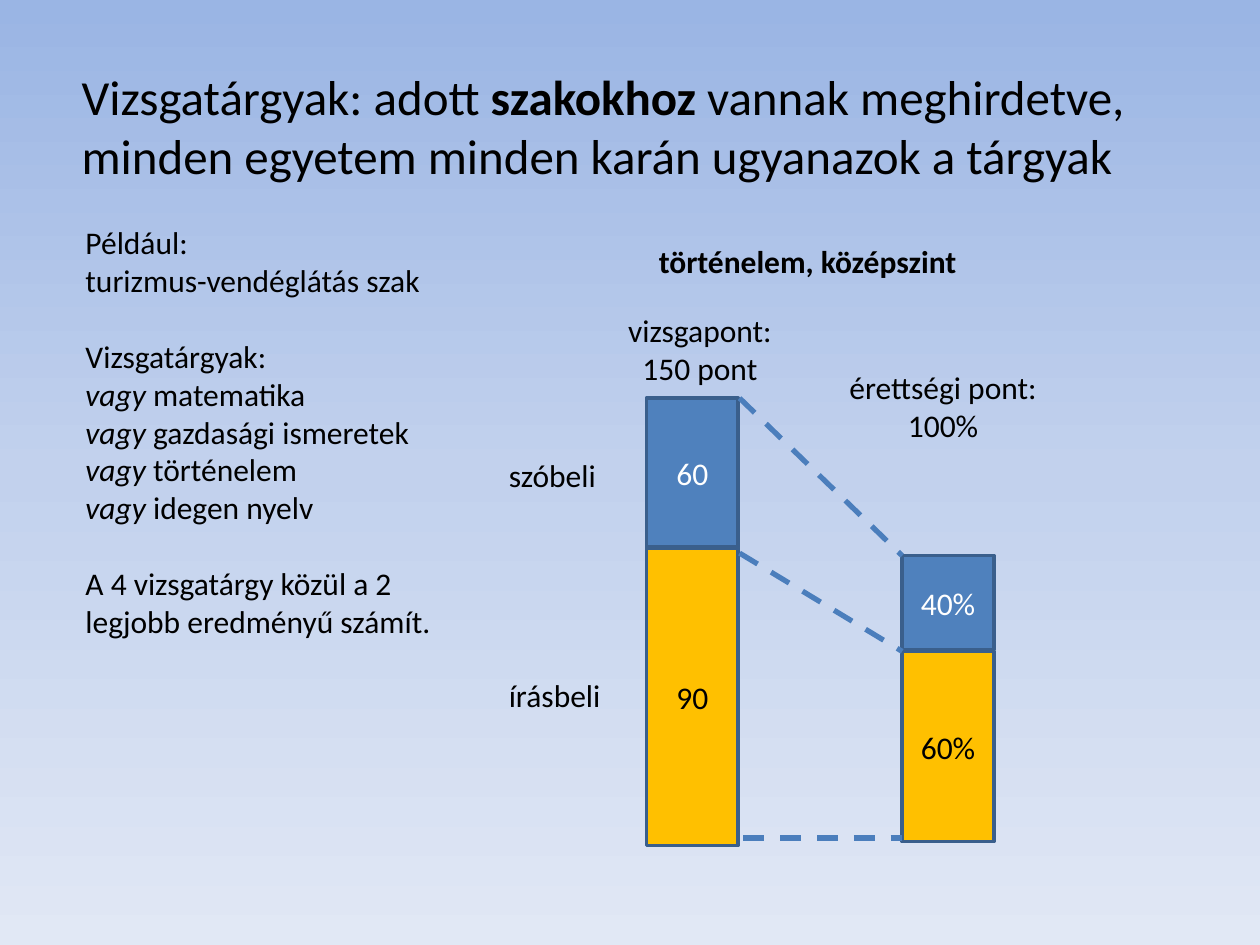
from copy import deepcopy

from lxml import etree
from pptx import Presentation
from pptx.dml.color import RGBColor
from pptx.enum.dml import MSO_LINE_DASH_STYLE as DASH
from pptx.enum.shapes import MSO_CONNECTOR as CONN, MSO_SHAPE as SHAPE
from pptx.enum.text import MSO_ANCHOR as ANCHOR, MSO_AUTO_SIZE as AUTO, PP_ALIGN as ALIGN
from pptx.oxml.ns import qn
from pptx.util import Inches, Pt

BLACK = RGBColor(0x00, 0x00, 0x00)
WHITE = RGBColor(0xFF, 0xFF, 0xFF)
BLUE = RGBColor(0x4F, 0x81, 0xBD)
YELLOW = RGBColor(0xFF, 0xC0, 0x00)
OUTLINE = RGBColor(0x3A, 0x5F, 0x8C)
DASHED = RGBColor(0x4B, 0x7E, 0xBC)
SKY = [(0, RGBColor(0x9A, 0xB5, 0xE4)),
       (0.5, RGBColor(0xC2, 0xD1, 0xED)),
       (1, RGBColor(0xE1, 0xE8, 0xF5))]


def add_run(p, text, size=18, color=BLACK, font="Calibri", bold=False, italic=False):
    r = p.add_run()
    r.text = text
    f = r.font
    f.name, f.size, f.bold, f.italic = font, Pt(size), bold, italic
    f.color.rgb = color


class Deck:
    """Style and current slide, with one method per kind of element."""

    def __init__(self, prs):
        self.s = prs.slides.add_slide(prs.slide_layouts[6])

    def background(self, stops):
        fill = self.s.background.fill
        fill.gradient()
        fill.gradient_angle = 270
        gs_list = next(self.s.element.iter(qn("a:gsLst")))
        gs_list.append(deepcopy(gs_list[0]))
        for stop, (position, color) in zip(fill.gradient_stops, stops):
            stop.position = position
            stop.color.rgb = color

    def text(self, x, y, w, h, paragraphs, wrap=False, align=ALIGN.LEFT, gaps=(), **fmt):
        """A paragraph is a string or a list of (text, format); gaps lists those set off by a line."""
        tf = self.s.shapes.add_textbox(Inches(x), Inches(y), Inches(w), Inches(h)).text_frame
        tf.word_wrap = wrap
        tf.auto_size = AUTO.SHAPE_TO_FIT_TEXT
        for i, runs in enumerate(paragraphs):
            p = tf.add_paragraph() if i else tf.paragraphs[0]
            p.alignment = align
            if i in gaps:
                p.space_before = Pt(22)
            for text, extra in [(runs, {})] if isinstance(runs, str) else runs:
                add_run(p, text, **{**fmt, **extra})

    def bar(self, x, y, h, label, fill, color, w=0.73):
        sp = self.s.shapes.add_shape(SHAPE.RECTANGLE, Inches(x), Inches(y), Inches(w), Inches(h))
        sp.shadow.inherit = False
        sp.fill.solid()
        sp.fill.fore_color.rgb = fill
        sp.line.color.rgb = OUTLINE
        sp.line.width = Pt(2)
        tf = sp.text_frame
        tf.vertical_anchor = ANCHOR.MIDDLE
        p = tf.paragraphs[0]
        p.alignment = ALIGN.CENTER
        add_run(p, label, color=color)

    def dashed(self, x1, y1, x2, y2):
        line = self.s.shapes.add_connector(CONN.STRAIGHT, *map(Inches, (x1, y1, x2, y2)))
        line.line.color.rgb = DASHED
        line.line.width = Pt(3)
        line.line.dash_style = DASH.DASH
        etree.SubElement(line.element.spPr, qn("a:effectLst"))


def main():
    prs = Presentation()
    prs.slide_width, prs.slide_height = Inches(10), Inches(7.5)
    deck = Deck(prs)
    deck.background(SKY)

    # Title
    deck.text(0.55, 0.48, 8.57, 1.04, [
        [("Vizsgatárgyak: adott ", {}), ("szakokhoz", {"bold": True}),
         (" vannak meghirdetve,", {})],
        "minden egyetem minden karán ugyanazok a tárgyak"], size=28)

    # Example with the choice of subjects
    subjects = ["matematika", "gazdasági ismeretek", "történelem", "idegen nyelv"]
    choices = [[("vagy", {"italic": True}), (f" {subject}", {})] for subject in subjects]
    deck.text(0.58, 1.72, 3.11, 3.43, [
        "Például:", "turizmus-vendéglátás szak", "Vizsgatárgyak:", *choices,
        "A 4 vizsgatárgy közül a 2 legjobb eredményű számít."], wrap=True, gaps=(2, 7))

    # Stacked bars: exam points and their percentages
    exam_x, percent_x = 5.13, 7.16
    for x, y, h, label, fill, color in [
            (exam_x, 3.16, 1.18, "60", BLUE, WHITE),
            (exam_x, 4.35, 2.36, "90", YELLOW, BLACK),
            (percent_x, 4.41, 0.75, "40%", BLUE, WHITE),
            (percent_x, 5.17, 1.51, "60%", YELLOW, BLACK)]:
        deck.bar(x, y, h, label, fill, color)

    # Chart labels
    deck.text(4.88, 2.42, 1.35, 0.71, ["vizsgapont:", "150 pont"], align=ALIGN.CENTER)
    deck.text(6.51, 2.87, 1.95, 0.71, ["érettségi pont:", "100%"], wrap=True, align=ALIGN.CENTER)
    deck.text(5.13, 1.87, 2.58, 0.4, ["történelem, középszint"], bold=True)
    deck.text(3.94, 3.57, 0.9, 0.4, ["szóbeli"])
    deck.text(3.94, 5.32, 0.94, 0.4, ["írásbeli"])

    # Dashed lines between the bars
    for x1, y1, y2 in [(5.87, 3.16, 4.41), (5.87, 4.39, 5.17), (5.9, 6.65, 6.65)]:
        deck.dashed(x1, y1, percent_x, y2)

    prs.save("out.pptx")


if __name__ == "__main__":
    main()
